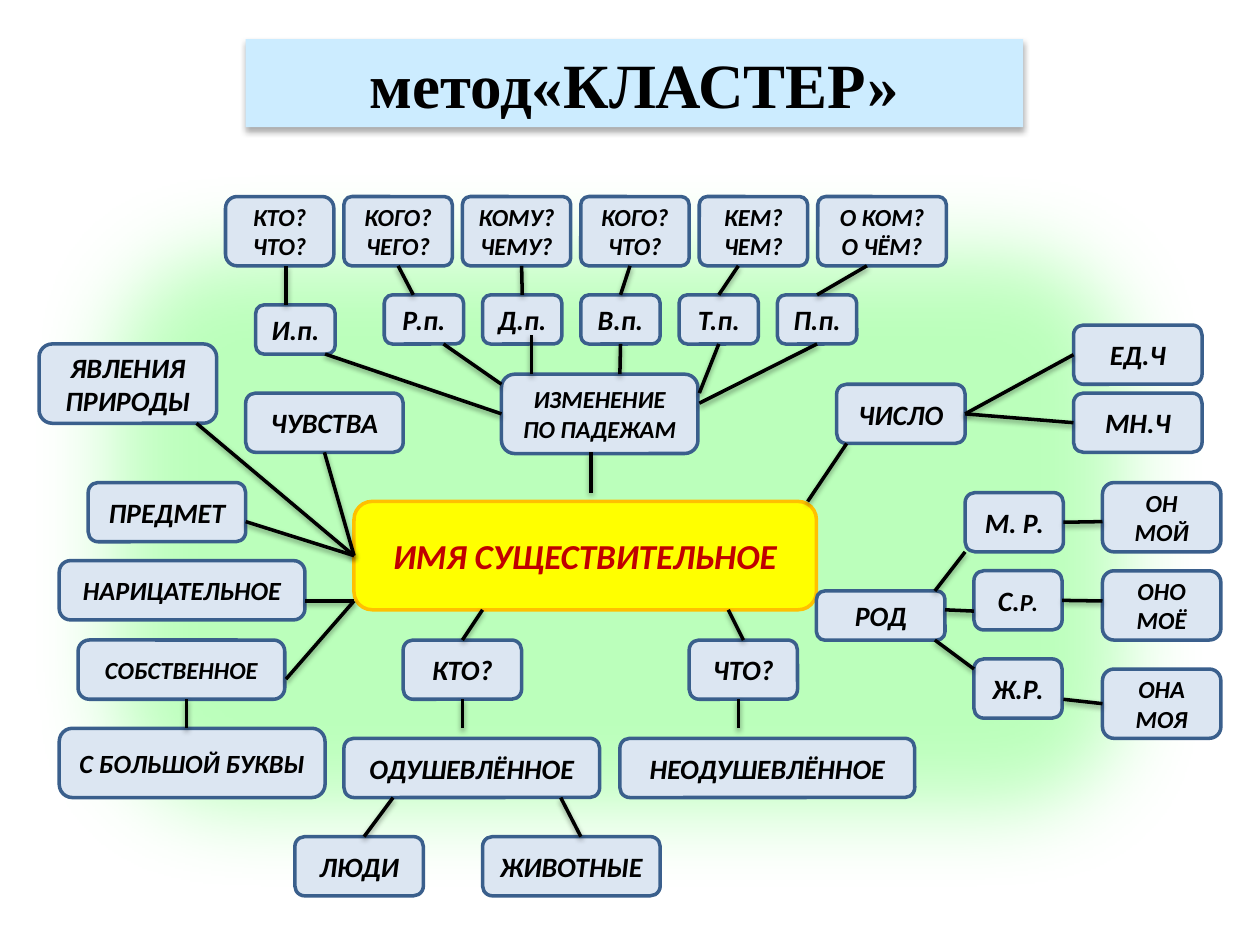
from dataclasses import dataclass
from math import dist

from lxml.etree import SubElement
from pptx import Presentation
from pptx.dml.color import RGBColor
from pptx.enum.shapes import MSO_CONNECTOR as Connector, MSO_SHAPE as Preset
from pptx.enum.text import MSO_ANCHOR as Anchor, PP_ALIGN as Align
from pptx.oxml import parse_xml
from pptx.oxml.ns import nsdecls, qn
from pptx.util import Inches, Pt

COLORS = {
    "panel": "99FF99", "banner": "CCECFF", "node": "DCE6F2", "border": "3A5F8C",
    "core": "FFFF00", "core_border": "FFC000", "core_text": "C00000", "ink": "000000",
}
NODE_FONT = {"name": "Calibri", "bold": True, "italic": True}
TITLE_FONT = {"name": "Times New Roman", "bold": True, "size": Pt(36)}
JOIN_TOLERANCE = 0.02


@dataclass
class Node:
    text: str
    left: float
    top: float
    width: float
    height: float = 0.47
    size: int = 16
    corner: float = 0.167
    small_tail: str = ""
    fill: str = "node"
    border: str = "border"
    ink: str = "ink"

    def side_middles(self) -> list[tuple[float, float]]:
        """Middles of the top, left, bottom and right sides."""
        mid_x, mid_y = self.left + self.width / 2, self.top + self.height / 2
        return [(mid_x, self.top), (self.left, mid_y),
                (mid_x, self.top + self.height), (self.left + self.width, mid_y)]


@dataclass
class Link:
    x1: float
    y1: float
    x2: float
    y2: float


CASE_QUESTIONS = ["КТО?\nЧТО?", "КОГО?\nЧЕГО?", "КОМУ?\nЧЕМУ?",
                  "КОГО?\nЧТО?", "КЕМ?\nЧЕМ?", "О КОМ?\nО ЧЁМ?"]
CASES = ["Р.п.", "Д.п.", "В.п.", "Т.п.", "П.п."]
PRONOUNS = [("ОН\nМОЙ", 3.83), ("ОНО\nМОЁ", 4.53), ("ОНА\nМОЯ", 5.31)]

NODES = [
    Node("ИМЯ СУЩЕСТВИТЕЛЬНОЕ", 2.81, 3.98, 3.67, 0.86, 20,
         fill="core", border="core_border", ink="core_text"),
    # Animate and inanimate
    Node("КТО?", 3.2, 5.08, 0.94),
    Node("ЧТО?", 5.47, 5.08, 0.86),
    Node("ОДУШЕВЛЁННОЕ", 2.73, 5.86, 2.03),
    Node("НЕОДУШЕВЛЁННОЕ", 4.92, 5.86, 2.34),
    Node("ЛЮДИ", 2.34, 6.64, 1.02),
    Node("ЖИВОТНЫЕ", 3.83, 6.64, 1.41),
    # Meaning, common and proper nouns
    Node("ЯВЛЕНИЯ ПРИРОДЫ", 0.31, 2.73, 1.41, 0.63),
    Node("ЧУВСТВА", 1.95, 3.12, 1.25),
    Node("ПРЕДМЕТ", 0.7, 3.83, 1.25),
    Node("НАРИЦАТЕЛЬНОЕ", 0.47, 4.45, 1.95, size=15, corner=0.19),
    Node("СОБСТВЕННОЕ", 0.62, 5.08, 1.64, size=14, corner=0.19),
    Node("С БОЛЬШОЙ БУКВЫ", 0.47, 5.78, 2.11, 0.55, 15, 0.19),
    # Number
    Node("ЧИСЛО", 6.64, 3.05, 1.02),
    Node("ЕД.Ч", 8.52, 2.58, 1.02),
    Node("МН.Ч", 8.52, 3.12, 1.02),
    # Gender
    Node("РОД", 6.48, 4.69, 1.02, 0.39),
    Node("М. Р.", 7.66, 3.91, 0.78),
    Node("С.", 7.73, 4.53, 0.7, small_tail="Р."),
    Node("Ж.Р.", 7.73, 5.23, 0.7),
    *(Node(text, 8.75, top, 0.94, 0.55, 14) for text, top in PRONOUNS),
    # Cases
    Node("ИЗМЕНЕНИЕ\nПО ПАДЕЖАМ", 3.98, 2.97, 1.56, 0.63, 14),
    Node("И.п.", 2.03, 2.42, 0.63, 0.39),
    *(Node(case, 3.05 + 0.78 * i, 2.34, 0.63, 0.39) for i, case in enumerate(CASES)),
    *(Node(question, 1.79 + 0.94 * i, 1.56, 1.02 if i == 5 else 0.86, 0.55, 14,
           0.115 if i else 0.167) for i, question in enumerate(CASE_QUESTIONS)),
]

LINKS = [Link(*ends) for ends in [
    # Animate and inanimate
    (3.67, 5.08, 3.83, 4.84), (5.9, 5.08, 5.78, 4.84),
    (3.67, 5.55, 3.67, 5.78), (5.86, 5.55, 5.86, 5.78),
    (3.12, 6.33, 2.89, 6.64), (4.45, 6.33, 4.61, 6.64),
    # Meaning, common and proper nouns
    (2.81, 4.41, 1.56, 3.36), (2.81, 4.41, 2.58, 3.59), (2.81, 4.41, 1.95, 4.14),
    (2.81, 4.77, 2.42, 4.77), (2.81, 4.77, 2.27, 5.39), (1.48, 5.55, 1.48, 5.78),
    # Number
    (6.41, 3.98, 6.72, 3.52), (7.66, 3.28, 8.52, 2.81), (7.66, 3.28, 8.52, 3.36),
    # Gender
    (7.42, 4.69, 7.66, 4.38), (7.73, 4.85, 7.5, 4.84), (7.73, 5.31, 7.42, 5.08),
    (8.75, 4.14, 8.44, 4.14), (8.75, 4.77, 8.44, 4.77), (8.75, 5.59, 8.44, 5.55),
    # Cases
    (4.69, 3.91, 4.69, 3.59), (3.98, 3.28, 2.58, 2.81), (3.98, 3.05, 3.52, 2.73),
    (4.22, 2.97, 4.22, 2.66), (4.92, 2.97, 4.92, 2.73), (5.55, 3.12, 5.7, 2.73),
    (5.55, 3.2, 6.48, 2.73), (2.27, 2.42, 2.27, 2.11), (3.28, 2.34, 3.16, 2.11),
    (4.14, 2.34, 4.14, 2.11), (4.92, 2.34, 5, 2.11), (5.7, 2.34, 5.86, 2.11),
    (6.48, 2.34, 6.88, 2.11),
]]


def rgb(key: str) -> RGBColor:
    return RGBColor.from_string(COLORS[key])


def set_fill(shape, key: str) -> None:
    shape.fill.solid()
    shape.fill.fore_color.rgb = rgb(key)


def format_font(font, ink: str, values: dict) -> None:
    for attribute, value in values.items():
        setattr(font, attribute, value)
    font.color.rgb = rgb(ink)


def add_shadow(shape, blur: float, distance: float, opacity: int) -> None:
    """Give the shape a soft black shadow straight below it."""
    shape.element.spPr.append(parse_xml(
        f'<a:effectLst {nsdecls("a")}><a:outerShdw blurRad="{Pt(blur)}" '
        f'dist="{Pt(distance)}" dir="5400000" rotWithShape="0"><a:srgbClr '
        f'val="{COLORS["ink"]}"><a:alpha val="{opacity * 1000}"/></a:srgbClr>'
        '</a:outerShdw></a:effectLst>'))


def add_panel(slide) -> None:
    """Draw the translucent green field with soft edges."""
    panel = slide.shapes.add_shape(
        Preset.ROUNDED_RECTANGLE, *map(Inches, (0.23, 1.33, 9.38, 5.78)))
    set_fill(panel, "panel")
    color = panel.element.spPr.find(qn("a:solidFill"))[0]
    SubElement(color, qn("a:alpha"), val="65000")
    panel.line.fill.background()
    panel.shadow.inherit = False
    effects = panel.element.spPr.find(qn("a:effectLst"))
    SubElement(effects, qn("a:softEdge"), rad=str(Pt(50)))


def add_title(slide) -> None:
    title = slide.shapes.title
    title.left, title.top, title.width, title.height = map(Inches, (1.95, 0.31, 6.17, 0.7))
    set_fill(title, "banner")
    add_shadow(title, 3.5, 2.2, 32)
    title.text_frame.text = "метод«КЛАСТЕР»"
    title.text_frame.vertical_anchor = Anchor.MIDDLE
    heading = title.text_frame.paragraphs[0]
    heading.alignment = Align.CENTER
    format_font(heading.runs[0].font, "ink", TITLE_FONT)


def add_node(slide, node: Node):
    box = slide.shapes.add_shape(
        Preset.ROUNDED_RECTANGLE,
        *map(Inches, (node.left, node.top, node.width, node.height)))
    box.adjustments[0] = node.corner
    box.shadow.inherit = False
    set_fill(box, node.fill)
    box.line.color.rgb = rgb(node.border)
    box.line.width = Pt(2)
    frame = box.text_frame
    frame.text = node.text
    frame.vertical_anchor = Anchor.MIDDLE
    for paragraph in frame.paragraphs:
        paragraph.alignment = Align.CENTER
        format_font(paragraph.runs[0].font, node.ink, NODE_FONT | {"size": Pt(node.size)})
    if node.small_tail:
        tail = frame.paragraphs[-1].add_run()
        tail.text = node.small_tail
        format_font(tail.font, node.ink, NODE_FONT | {"size": Pt(14)})
    return box


def add_link(slide, link: Link, boxes: list) -> None:
    """Draw a line and join each end that meets the middle of a node's side."""
    line = slide.shapes.add_connector(
        Connector.STRAIGHT, *map(Inches, (link.x1, link.y1, link.x2, link.y2)))
    line.line.color.rgb = rgb("ink")
    line.line.width = Pt(2)
    add_shadow(line, 3.1, 1.6, 38)
    ends = [((link.x1, link.y1), line.begin_connect), ((link.x2, link.y2), line.end_connect)]
    for point, connect in ends:
        for node, box in zip(NODES, boxes):
            for side, middle in enumerate(node.side_middles()):
                if dist(point, middle) <= JOIN_TOLERANCE:
                    connect(box, side)


def main() -> None:
    deck = Presentation()
    deck.slide_width, deck.slide_height = Inches(10), Inches(7.5)
    slide = deck.slides.add_slide(deck.slide_layouts[5])
    add_panel(slide)
    add_title(slide)
    boxes = [add_node(slide, node) for node in NODES]
    for link in LINKS:
        add_link(slide, link, boxes)
    deck.save("out.pptx")


if __name__ == "__main__":
    main()
